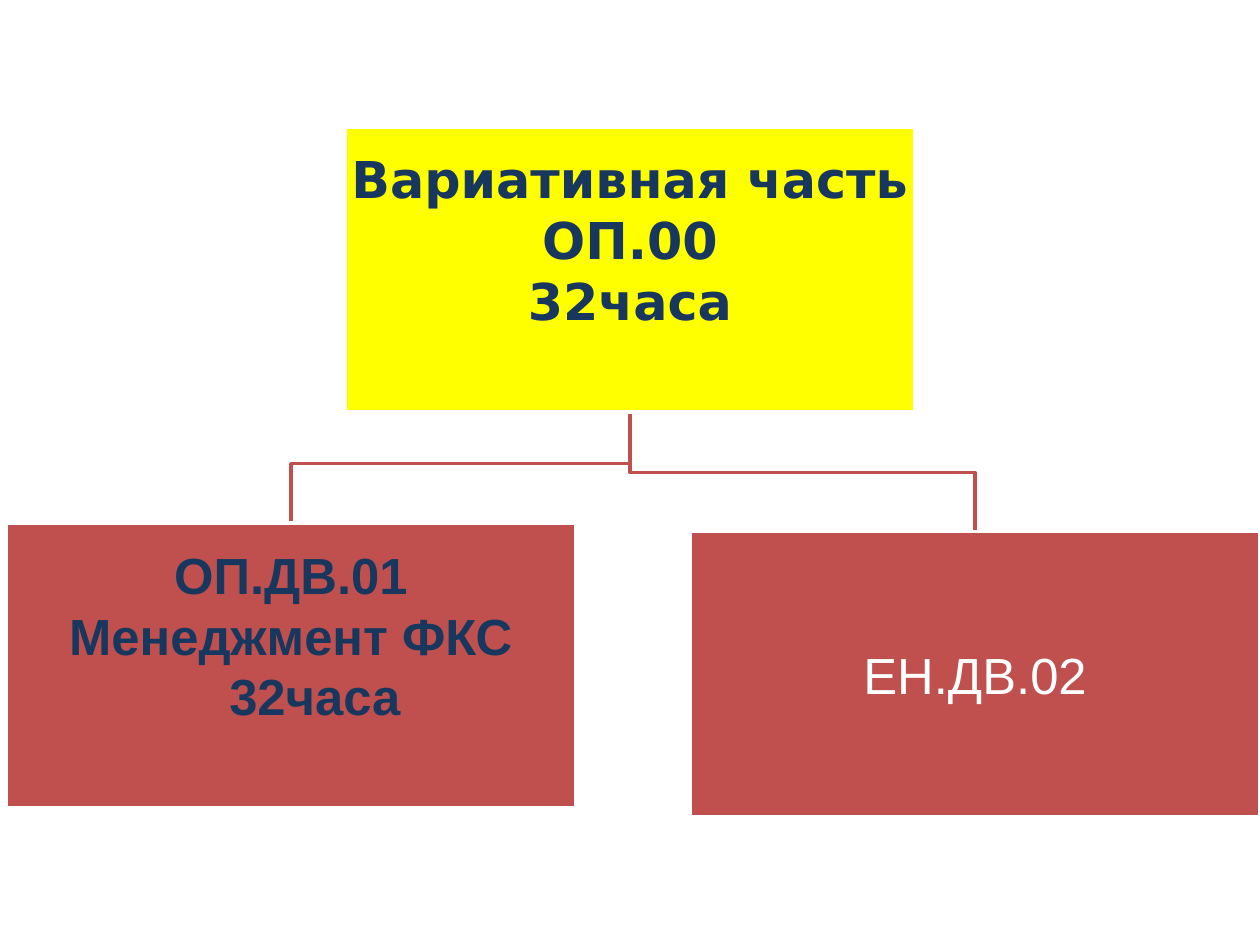
from pptx import Presentation
from pptx.dml.color import RGBColor
from pptx.enum.shapes import MSO_SHAPE as SHAPE
from pptx.enum.text import MSO_ANCHOR as ANCHOR, PP_ALIGN as ALIGN
from pptx.util import Inches, Pt

COLORS = {"yellow": "FFFF00", "red": "C0504D", "white": "FFFFFF", "navy": "17375E"}
BOX_W, BOX_H, DROP = 4.52, 2.26, 0.47
ROOT = (2.74, 1.01)
LEFT_CHILD, RIGHT_CHILD = (0.05, 4.15), (5.48, 4.22)


class OrgChart:
    """Draws the boxes and branches of an organisation chart on one slide."""

    def __init__(self, slide):
        self.s = slide
        self.line_width = Pt(2)
        self.frame = {"word_wrap": True, "vertical_anchor": ANCHOR.MIDDLE}
        self.frame.update({f"margin_{side}": Inches(0.02) for side in ("left", "top", "right", "bottom")})
        self.para = {"alignment": ALIGN.CENTER, "line_spacing": Pt(34.6)}

    def color(self, name):
        return RGBColor.from_string(COLORS[name])

    def apply(self, target, values):
        for name, value in values.items():
            setattr(target, name, value)

    def outline(self, sp, color):
        sp.shadow.inherit = False
        sp.line.color.rgb = self.color(color)
        sp.line.width = self.line_width

    def branch(self, parent, child):
        x, y = Inches(parent[0] + BOX_W / 2), Inches(parent[1] + BOX_H)
        end_x, end_y = Inches(child[0] + BOX_W / 2), Inches(child[1])
        bus_y = end_y - Inches(DROP)
        builder = self.s.shapes.build_freeform(x, y)
        builder.add_line_segments([(x, bus_y), (end_x, bus_y), (end_x, end_y)], close=False)
        sp = builder.convert_to_shape()
        sp.fill.background()
        self.outline(sp, "red")

    def box(self, at, fill, lines, color, font="Arial", bold=True, bottom=0.02):
        sp = self.s.shapes.add_shape(SHAPE.RECTANGLE, *map(Inches, (*at, BOX_W, BOX_H)))
        sp.fill.solid()
        sp.fill.fore_color.rgb = self.color(fill)
        self.outline(sp, "white")
        tf = sp.text_frame
        self.apply(tf, {**self.frame, "margin_bottom": Inches(bottom)})
        for i, line in enumerate(lines):
            p = tf.add_paragraph() if i else tf.paragraphs[0]
            self.apply(p, self.para)
            pPr = p._p.get_or_add_pPr()
            pPr.set("marL", str(Inches(0.38)))
            pPr.set("indent", str(Inches(-0.38)))
            r = p.add_run()
            r.text = line
            self.apply(r.font, {"name": font, "size": Pt(29), "bold": bold})
            r.font.color.rgb = self.color(color)


def main():
    prs = Presentation()
    prs.slide_width, prs.slide_height = Inches(10), Inches(7.5)
    chart = OrgChart(prs.slides.add_slide(prs.slide_layouts[6]))
    for child in (RIGHT_CHILD, LEFT_CHILD):
        chart.branch(ROOT, child)
    chart.box(ROOT, "yellow", ["Вариативная часть", "ОП.00", "32часа"], "navy",
              font="DejaVu Sans", bottom=0.5)
    chart.box(LEFT_CHILD, "red", ["ОП.ДВ.01", "Менеджмент ФКС 32часа"], "navy", bottom=0.5)
    chart.box(RIGHT_CHILD, "red", ["ЕН.ДВ.02"], "white", bold=False)
    prs.save("out.pptx")


if __name__ == "__main__":
    main()
